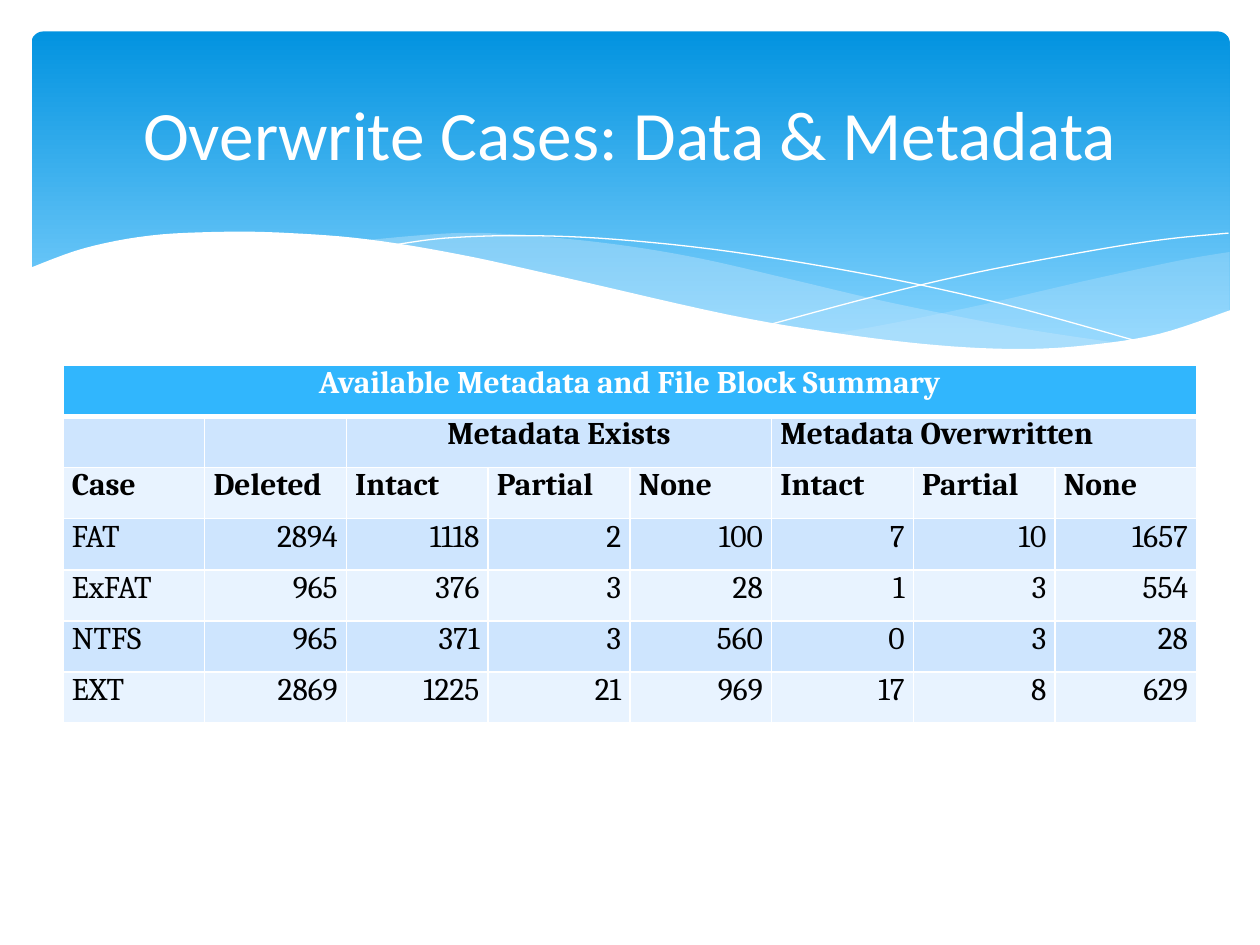
from dataclasses import dataclass

from lxml.etree import SubElement
from pptx import Presentation
from pptx.dml.color import RGBColor as Rgb
from pptx.enum.shapes import MSO_SHAPE as Shape
from pptx.enum.text import MSO_ANCHOR as Anchor, PP_ALIGN as Align
from pptx.oxml.ns import qn
from pptx.util import Inches, Pt

TITLE = "Overwrite Cases: Data & Metadata"
TABLE_TITLE = "Available Metadata and File Block Summary"
GROUPS = [(2, "Metadata Exists", Align.CENTER), (5, "Metadata Overwritten", Align.LEFT)]
STATES = ["Intact", "Partial", "None"]
HEADINGS = ["Case", "Deleted"] + STATES * len(GROUPS)
CASES = [
    ("FAT", 2894, 1118, 2, 100, 7, 10, 1657),
    ("ExFAT", 965, 376, 3, 28, 1, 3, 554),
    ("NTFS", 965, 371, 3, 560, 0, 3, 28),
    ("EXT", 2869, 1225, 21, 969, 17, 8, 629),
]

# Waves are edges of knots in inches; each edge is smoothed separately.
RIGHT_RIBBON = [
    [(9.76, 2), (9.35, 2.07), (8.61, 2.23), (7.79, 2.42), (7.06, 2.57), (6.61, 2.65)],
    [(6.61, 2.65), (7.05, 2.71), (7.57, 2.76), (8.14, 2.78), (8.72, 2.74),
     (9.21, 2.65), (9.76, 2.47)],
]
LEFT_RIBBON = [
    [(8.93, 2.73), (8.07, 2.6), (7.06, 2.4), (6.29, 2.22), (5.55, 2.05), (4.89, 1.94),
     (4.2, 1.87), (3.61, 1.85), (2.86, 1.91)],
    [(2.86, 1.91), (3.62, 2.03), (4.49, 2.22), (5.3, 2.4), (6.18, 2.58), (6.95, 2.7),
     (7.61, 2.77), (8.28, 2.78), (8.93, 2.73)],
]
FALLING_LINE = [[(3.09, 1.95), (3.53, 1.89), (4.16, 1.87), (4.89, 1.9), (5.82, 2),
                 (6.95, 2.19), (7.95, 2.41), (9.07, 2.72)]]
RISING_LINE = [[(6.13, 2.57), (6.95, 2.35), (7.76, 2.16), (8.66, 1.99),
                (9.24, 1.9), (9.75, 1.85)]]
WHITE_WAVE = [
    [(9.77, 2.46), (9.2, 2.65), (8.63, 2.74), (8.09, 2.77), (7.44, 2.74), (6.68, 2.65),
     (5.79, 2.5), (4.47, 2.2), (3.65, 2.02), (2.92, 1.9), (2.3, 1.85), (1.77, 1.84),
     (1.19, 1.87), (0.67, 1.97), (0.23, 2.13)],
    [(0.23, 3.29), (9.77, 3.29)],
]


@dataclass(frozen=True)
class Theme:
    white: str = "FFFFFF"
    black: str = "000000"
    sky_top: str = "0293E0"
    sky_bottom: str = "83D3FE"
    ribbon: str = "C6E7FC"
    table_head: str = "31B6FD"
    bands: tuple = ("CEE5FE", "E8F3FF")
    title_font: str = "Calibri"
    table_font: str = "Cambria"
    title_size: float = 39.6
    table_size: float = 18


THEME = Theme()
WIDTH, HEIGHT = 10, 7.5
MARGIN = WIDTH / 20
TABLE_TOP, TABLE_HEIGHT = 2.9, 2.84
CURVE_STEPS = 6


def rgb(code):
    return Rgb.from_string(code)


def smooth(knots):
    """Sample a Catmull-Rom curve through the knots."""
    padded = [knots[0], *knots, knots[-1]]
    points = [knots[0]]
    for a, b, c, d in zip(padded, padded[1:], padded[2:], padded[3:]):
        for step in range(1, CURVE_STEPS + 1):
            t = step / CURVE_STEPS
            points.append(tuple(
                q + t / 2 * (r - p + t * (2*p - 5*q + 4*r - s + t * (3*(q - r) + s - p)))
                for p, q, r, s in zip(a, b, c, d)))
    return points


def add_wave(page, edges, fill=None, opacity=100):
    """Draw a filled wave, or an open white hairline when no fill is given."""
    points = [(Inches(x), Inches(y)) for edge in edges for x, y in smooth(edge)]
    builder = page.shapes.build_freeform(*points[0])
    builder.add_line_segments(points[1:], close=fill is not None)
    wave = builder.convert_to_shape()
    wave.shadow.inherit = False
    if fill is None:
        wave.fill.background()
        wave.line.color.rgb = rgb(THEME.white)
        wave.line.width = 0
        return
    wave.line.fill.background()
    wave.fill.solid()
    wave.fill.fore_color.rgb = rgb(fill)
    if opacity < 100:
        color = wave.fill._xPr.find(qn("a:solidFill"))[0]
        SubElement(color, qn("a:alpha"), val=str(opacity * 1000))


def add_banner(page):
    banner = page.shapes.add_shape(Shape.ROUNDED_RECTANGLE, Inches(0.25), Inches(0.25),
                                   Inches(9.51), Inches(2.7))
    banner.adjustments[0] = 0.034
    banner.shadow.inherit = False
    banner.line.fill.background()
    banner.fill.gradient()
    banner.fill.gradient_angle = 270
    stops = [(0, THEME.sky_top), (0.9, THEME.sky_bottom)]
    for stop, (position, color) in zip(banner.fill.gradient_stops, stops):
        stop.position = position
        stop.color.rgb = rgb(color)


def write(frame, text, font, size, color, align, bold=False):
    frame.text = text
    para = frame.paragraphs[0]
    para.alignment = align
    for span in para.runs:
        span.font.name, span.font.size, span.font.bold = font, Pt(size), bold
        span.font.color.rgb = rgb(color)


def add_title(page):
    box = page.shapes.add_textbox(Inches(MARGIN), Inches(0.37),
                                  Inches(WIDTH - 2 * MARGIN), Inches(1.37))
    box.text_frame.word_wrap = True
    box.text_frame.vertical_anchor = Anchor.MIDDLE
    write(box.text_frame, TITLE, THEME.title_font, THEME.title_size, THEME.white, Align.CENTER)


def style_cell(cell, row):
    cell.margin_left = cell.margin_right = Inches(0.07)
    cell.margin_top = cell.margin_bottom = 0
    thick_side = {0: "B", 1: "T"}.get(row)
    properties = cell._tc.get_or_add_tcPr()
    for side in "LRTB":
        width = Pt(3 if side == thick_side else 1)
        border = SubElement(properties, qn(f"a:ln{side}"), w=str(width))
        paint = SubElement(border, qn("a:solidFill"))
        SubElement(paint, qn("a:srgbClr"), val=THEME.white)
    cell.fill.solid()
    cell.fill.fore_color.rgb = rgb(THEME.bands[(row - 1) % 2] if row else THEME.table_head)


def add_summary(page):
    first_case, columns = 3, len(HEADINGS)
    rows = first_case + len(CASES)
    table = page.shapes.add_table(rows, columns, Inches(MARGIN), Inches(TABLE_TOP),
                                  Inches(WIDTH - 2 * MARGIN), Inches(TABLE_HEIGHT)).table
    for row in range(rows):
        for column in range(columns):
            style_cell(table.cell(row, column), row)

    def fill_in(row, column, text, align=Align.LEFT):
        write(table.cell(row, column).text_frame, str(text), THEME.table_font,
              THEME.table_size, THEME.black if row else THEME.white, align,
              bold=row < first_case)

    table.cell(0, 0).merge(table.cell(0, columns - 1))
    fill_in(0, 0, TABLE_TITLE, Align.CENTER)
    for column, label, align in GROUPS:
        table.cell(1, column).merge(table.cell(1, column + len(STATES) - 1))
        fill_in(1, column, label, align)
    for column, heading in enumerate(HEADINGS):
        fill_in(2, column, heading)
    for row, case in enumerate(CASES, first_case):
        for column, value in enumerate(case):
            fill_in(row, column, value, Align.RIGHT if column else Align.LEFT)


def main():
    deck = Presentation()
    deck.slide_width, deck.slide_height = Inches(WIDTH), Inches(HEIGHT)
    page = deck.slides.add_slide(deck.slide_layouts[6])
    add_banner(page)
    add_wave(page, RIGHT_RIBBON, THEME.ribbon, 29)
    add_wave(page, LEFT_RIBBON, THEME.ribbon, 40)
    add_wave(page, FALLING_LINE)
    add_wave(page, RISING_LINE)
    add_wave(page, WHITE_WAVE, THEME.white)
    add_title(page)
    add_summary(page)
    deck.save("out.pptx")


if __name__ == "__main__":
    main()
